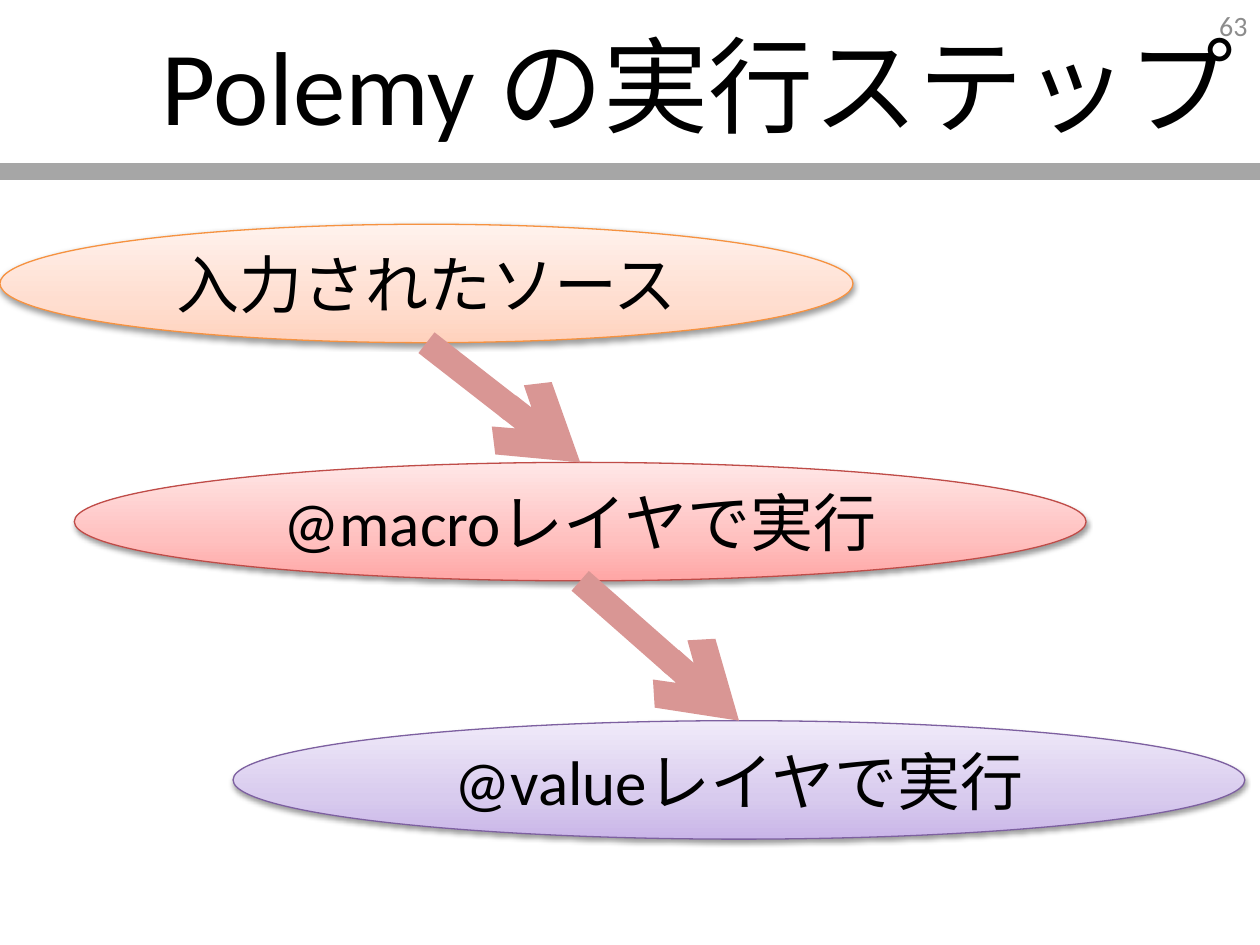
from dataclasses import dataclass

from lxml.etree import SubElement
from pptx import Presentation
from pptx.dml.color import RGBColor
from pptx.enum.shapes import MSO_CONNECTOR, MSO_SHAPE
from pptx.enum.text import MSO_ANCHOR, MSO_AUTO_SIZE, PP_ALIGN
from pptx.oxml import parse_xml
from pptx.oxml.ns import nsdecls, qn
from pptx.util import Inches, Pt


@dataclass(frozen=True)
class Theme:
    """Colours and type sizes of the slide."""
    font: str = "Calibri"
    ink: str = "000000"
    number: str = "8C8C8C"
    rule: str = "A6A6A6"
    arrow: str = "D99694"
    orange: tuple = ("FFD2BD", "FFDED0", "FFF2ED", "F69240")
    red: tuple = ("FFA6A5", "FFC0BF", "FFE7E7", "BF4C48")
    purple: tuple = ("C9B5E8", "D8CBEE", "F0EAF9", "7D60A0")
    title_size: int = 60
    step_size: int = 36
    number_size: int = 16


THEME = Theme()
STOPS = (0, 35, 100)
STEPS = (
    ("入力されたソース", THEME.orange, (0, 1.78, 6.77, 0.94)),
    ("@macroレイヤで実行", THEME.red, (0.59, 3.67, 8.03, 0.94)),
    ("@valueレイヤで実行", THEME.purple, (1.85, 5.72, 8.03, 0.94)),
)


def write_text(shape, text, size, color, align):
    """Put one formatted run in the middle of a shape's height."""
    frame = shape.text_frame
    frame.word_wrap = True
    frame.auto_size = MSO_AUTO_SIZE.NONE
    frame.vertical_anchor = MSO_ANCHOR.MIDDLE
    para = frame.paragraphs[0]
    para.alignment = align
    span = para.add_run()
    span.text = text
    span.font.name = THEME.font
    span.font.size = Pt(size)
    span.font.color.rgb = RGBColor.from_string(color)


def add_line(page, start, end, color, width):
    """Draw a straight line without a shadow between two points in inches."""
    line = page.shapes.add_connector(
        MSO_CONNECTOR.STRAIGHT, *map(Inches, (*start, *end)))
    line.line.color.rgb = RGBColor.from_string(color)
    line.line.width = Pt(width)
    SubElement(line._element.spPr, qn("a:effectLst"))
    return line


def add_header(page, box):
    """Place the title, the page number and the rule below them."""
    left, top, width, height = box
    title = page.shapes.title
    title.left, title.top = Inches(left + 0.89), Inches(top + 0.04)
    title.width, title.height = Inches(9), Inches(1.25)
    write_text(title, "Polemy の実行ステップ", THEME.title_size, THEME.ink, PP_ALIGN.RIGHT)
    number = page.shapes.add_textbox(
        Inches(left + width - 2.33), Inches(top), Inches(2.33), Inches(0.4))
    write_text(number, "63", THEME.number_size, THEME.number, PP_ALIGN.RIGHT)
    bottom = top + height
    add_line(page, (left, bottom), (left + width, bottom), THEME.rule, 10)


def fill_gradient(shape, colors):
    """Fill a shape with a gradient that rises from its lower edge."""
    shape.fill.gradient()
    shape.fill.gradient_angle = 90
    stop_list = shape._element.spPr.find(qn("a:gradFill")).find(qn("a:gsLst"))
    for stop in list(stop_list):
        stop_list.remove(stop)
    for position, color in zip(STOPS, colors):
        stop = SubElement(stop_list, qn("a:gs"), pos=str(position * 1000))
        SubElement(stop, qn("a:srgbClr"), val=color)


def add_shadow(shape):
    """Give a shape a soft shadow below it."""
    shape.shadow.inherit = False
    effects = shape._element.spPr.find(qn("a:effectLst"))
    effects.append(parse_xml(
        f'<a:outerShdw {nsdecls("a")} blurRad="{Pt(3.1)}" dist="{Pt(1.6)}" '
        'dir="5400000" rotWithShape="0"><a:srgbClr val="000000">'
        '<a:alpha val="38000"/></a:srgbClr></a:outerShdw>'))


def add_step(page, text, colors, box):
    """Draw one step as an ellipse filling the box."""
    *shades, outline = colors
    step = page.shapes.add_shape(MSO_SHAPE.OVAL, *map(Inches, box))
    fill_gradient(step, shades)
    step.line.color.rgb = RGBColor.from_string(outline)
    step.line.width = Pt(0.75)
    add_shadow(step)
    write_text(step, text, THEME.step_size, THEME.ink, PP_ALIGN.CENTER)


def add_step_arrow(page, upper, lower):
    """Point from the bottom of the upper box to the top of the lower one."""
    start = (upper[0] + upper[2] / 2, upper[1] + upper[3])
    end = (lower[0] + lower[2] / 2, lower[1])
    arrow = add_line(page, start, end, THEME.arrow, 15)
    SubElement(arrow.line._get_or_add_ln(), qn("a:tailEnd"), type="arrow")


def main():
    """Build the slide and save the deck."""
    deck = Presentation()
    deck.slide_width, deck.slide_height = Inches(10), Inches(7.5)
    page = deck.slides.add_slide(deck.slide_layouts[5])
    add_header(page, (0, 0, 10, 1.36))
    for step in STEPS:
        add_step(page, *step)
    for upper, lower in zip(STEPS, STEPS[1:]):
        add_step_arrow(page, upper[2], lower[2])
    deck.save("out.pptx")


if __name__ == "__main__":
    main()
